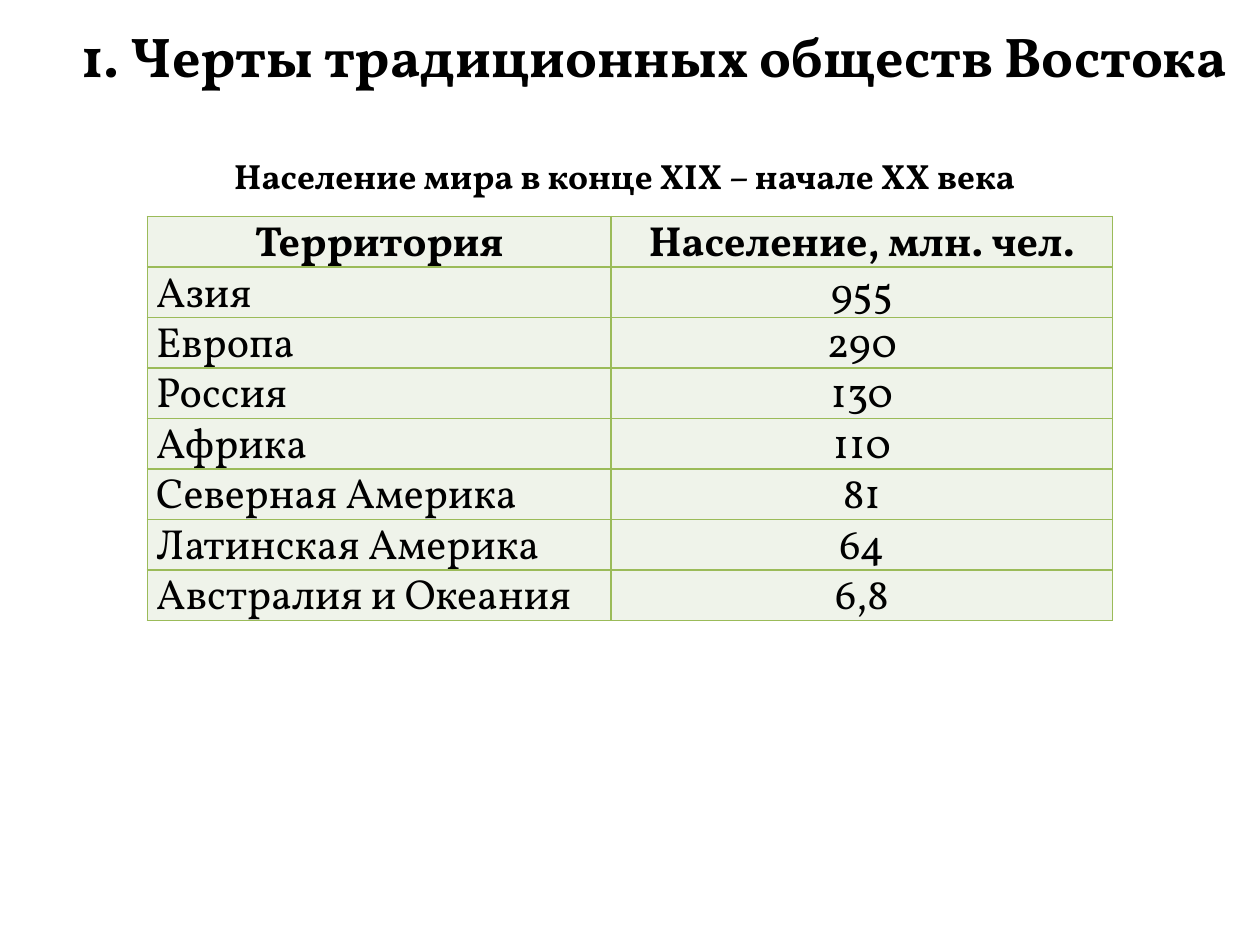
import pptx
import pptx.util
import pptx.dml.color
import pptx.enum.text
import pptx.oxml.ns
import lxml.etree

Inches = pptx.util.Inches
ALIGN = pptx.enum.text.PP_ALIGN
BLACK = pptx.dml.color.RGBColor(0x00, 0x00, 0x00)
GREEN = pptx.dml.color.RGBColor(0x9B, 0xBB, 0x59)
PALE = pptx.dml.color.RGBColor(0xEF, 0xF3, 0xEA)
FONT = "Vollkorn"
ROWS = [
    ("Территория", "Население, млн. чел."),
    ("Азия", "955"),
    ("Европа", "290"),
    ("Россия", "130"),
    ("Африка", "110"),
    ("Северная Америка", "81"),
    ("Латинская Америка", "64"),
    ("Австралия и Океания", "6,8"),
]


def write(frame, text, size=24, bold=False, align=ALIGN.CENTER):
    """Put one formatted paragraph in a text frame."""
    para = frame.paragraphs[0]
    para.alignment = align
    run = para.add_run()
    run.text = text
    run.font.name = FONT
    run.font.size = pptx.util.Pt(size)
    run.font.bold = bold
    run.font.color.rgb = BLACK


def add_label(slide, text, left, top, width, height, **style):
    """Add a wrapped text box with its text in the middle."""
    box = slide.shapes.add_textbox(
        Inches(left), Inches(top), Inches(width), Inches(height))
    frame = box.text_frame
    frame.word_wrap = True
    frame.vertical_anchor = pptx.enum.text.MSO_ANCHOR.MIDDLE
    write(frame, text, **style)


def add_border(cell):
    """Draw a thin green line on each side of a cell."""
    props = cell._tc.get_or_add_tcPr()
    name = pptx.oxml.ns.qn
    for place, side in enumerate(("a:lnL", "a:lnR", "a:lnT", "a:lnB")):
        line = lxml.etree.Element(name(side), w=str(pptx.util.Pt(1)))
        fill = lxml.etree.SubElement(line, name("a:solidFill"))
        lxml.etree.SubElement(fill, name("a:srgbClr"), val=str(GREEN))
        props.insert(place, line)


def add_grid(slide, rows, left, top, widths, height):
    """Add the table with a bold head row and centred figures."""
    shape = slide.shapes.add_table(
        len(rows), len(widths), Inches(left), Inches(top),
        Inches(sum(widths)), Inches(height * len(rows)))
    table = shape.table
    for column, width in zip(table.columns, widths):
        column.width = Inches(width)
    for r, row in enumerate(rows):
        table.rows[r].height = Inches(height)
        for c, text in enumerate(row):
            cell = table.cell(r, c)
            cell.margin_left = cell.margin_right = Inches(0.07)
            cell.margin_top = cell.margin_bottom = 0
            cell.fill.solid()
            cell.fill.fore_color.rgb = PALE
            add_border(cell)
            head = r == 0
            align = ALIGN.CENTER if head or c else ALIGN.JUSTIFY
            write(cell.text_frame, text, bold=head, align=align)


def main():
    """Build the slide and save it."""
    deck = pptx.Presentation()
    deck.slide_width, deck.slide_height = Inches(10), Inches(7.5)
    slide = deck.slides.add_slide(deck.slide_layouts[6])
    add_label(slide, "1. Черты традиционных обществ Востока",
              0.39, 0, 9.61, 0.87, size=32, bold=True)
    add_label(slide, "Население мира в конце XIX – начале ХХ века",
              1.64, 1.17, 6.64, 0.44, size=20, bold=True)
    add_grid(slide, ROWS, 1.17, 1.72, (3.68, 3.98), 0.4)
    deck.save("out.pptx")


if __name__ == "__main__":
    main()
